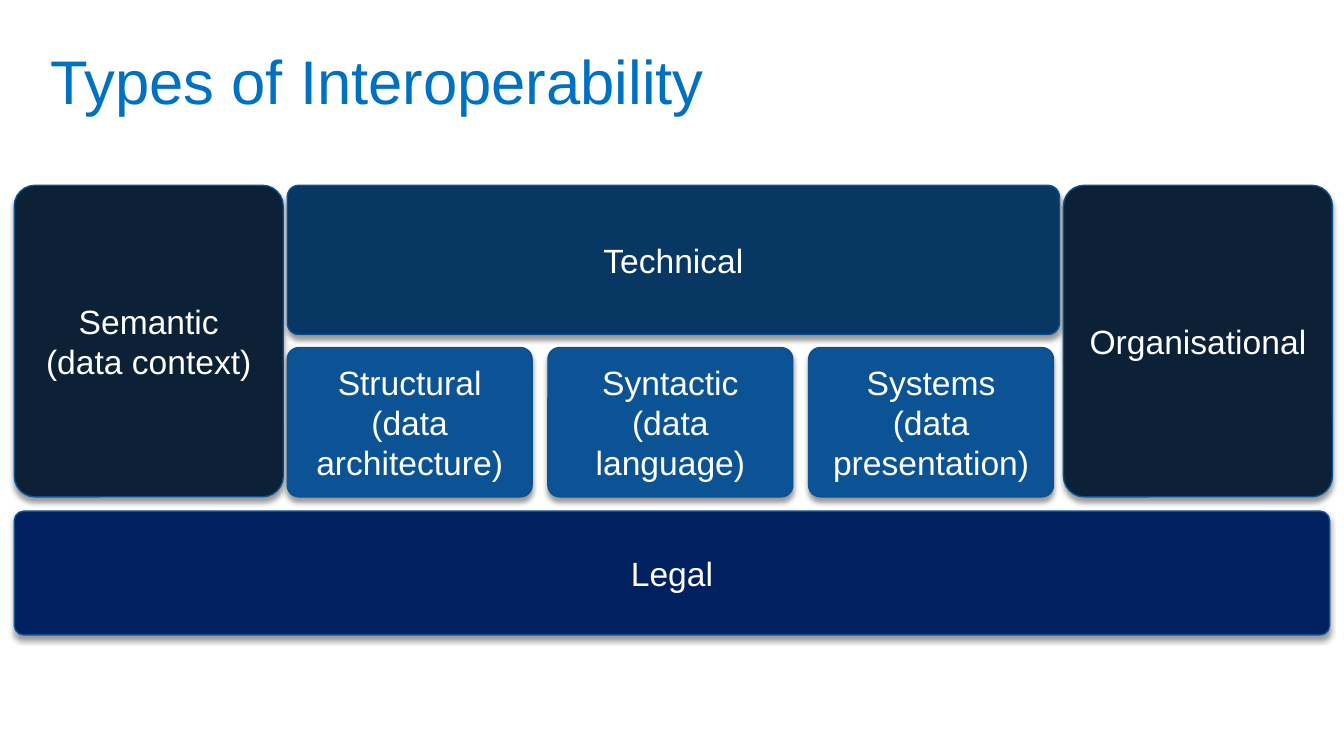
import pptx
import pptx.util
import pptx.dml.color
import pptx.enum.shapes
import pptx.enum.text
import pptx.oxml
import pptx.oxml.ns

Cm, Pt = pptx.util.Cm, pptx.util.Pt

TITLE = "Types of Interoperability"
DARK, MID, BRIGHT, NAVY = "0C2036", "083763", "0B5394", "002060"
EDGE, WHITE, BLUE = "0B5292", "FFFFFF", "0070C0"

LEFT, TOP, SIDE, TALL = 0.36, 4.67, 6.78, 7.85
INNER, ROW, HIGH = 7.24, 8.76, 3.76
WIDE, PITCH = 6.17, 6.57

PARTS = [
    ["Structural", "(data architecture)"],
    ["Syntactic", "(data language)"],
    ["Systems", "(data presentation)"],
]
BOXES = [
    (["Semantic", "(data context)"], DARK, (LEFT, TOP, SIDE, TALL)),
    *[(part, BRIGHT, (INNER + i * PITCH, ROW, WIDE, HIGH))
      for i, part in enumerate(PARTS)],
    (["Technical"], MID, (INNER, TOP, 19.46, HIGH)),
    (["Organisational"], DARK, (26.8, TOP, SIDE, TALL)),
    (["Legal"], NAVY, (LEFT, 12.88, 33.15, 3.12)),
]
SHADE = (
    f'<a:outerShdw {pptx.oxml.ns.nsdecls("a")} blurRad="{Pt(4)}" '
    f'dist="{Pt(3)}" dir="5400000" rotWithShape="0">'
    '<a:srgbClr val="000000"><a:alpha val="40000"/></a:srgbClr>'
    '</a:outerShdw>'
)


def paint(form, tone):
    """Give a fill, line or font a solid colour."""
    fill = form if hasattr(form, "solid") else form.fill
    fill.solid()
    fill.fore_color.rgb = pptx.dml.color.RGBColor.from_string(tone)


def write(shape, lines, size, tone, align):
    """Put centred-height lines of text in a shape."""
    frame = shape.text_frame
    frame.word_wrap = True
    frame.vertical_anchor = pptx.enum.text.MSO_ANCHOR.MIDDLE
    frame.text = "\n".join(lines)
    for para in frame.paragraphs:
        para.alignment = align
        para.font.name = "Arial"
        para.font.size = Pt(size)
        paint(para.font, tone)


def block(slide, lines, tone, place):
    """Draw one rounded block with a soft shadow."""
    kind = pptx.enum.shapes.MSO_SHAPE.ROUNDED_RECTANGLE
    shape = slide.shapes.add_shape(kind, *map(Cm, place))
    shape.adjustments[0] = 0.077
    paint(shape.fill, tone)
    paint(shape.line, EDGE)
    shape.line.width = Pt(1)
    shape.shadow.inherit = False
    glow = shape._element.spPr.find(pptx.oxml.ns.qn("a:effectLst"))
    glow.append(pptx.oxml.parse_xml(SHADE))
    write(shape, lines, 24, WHITE, pptx.enum.text.PP_ALIGN.CENTER)


def main():
    """Build the slide and save it."""
    deck = pptx.Presentation()
    deck.slide_width, deck.slide_height = Cm(33.87), Cm(19.05)
    slide = deck.slides.add_slide(deck.slide_layouts[6])
    head = slide.shapes.add_textbox(Cm(1.02), Cm(0.28), Cm(29.21), Cm(3.68))
    write(head, [TITLE], 44, BLUE, pptx.enum.text.PP_ALIGN.LEFT)
    head.text_frame.paragraphs[0].line_spacing = 0.9
    for lines, tone, place in BOXES:
        block(slide, lines, tone, place)
    deck.save("out.pptx")


if __name__ == "__main__":
    main()
